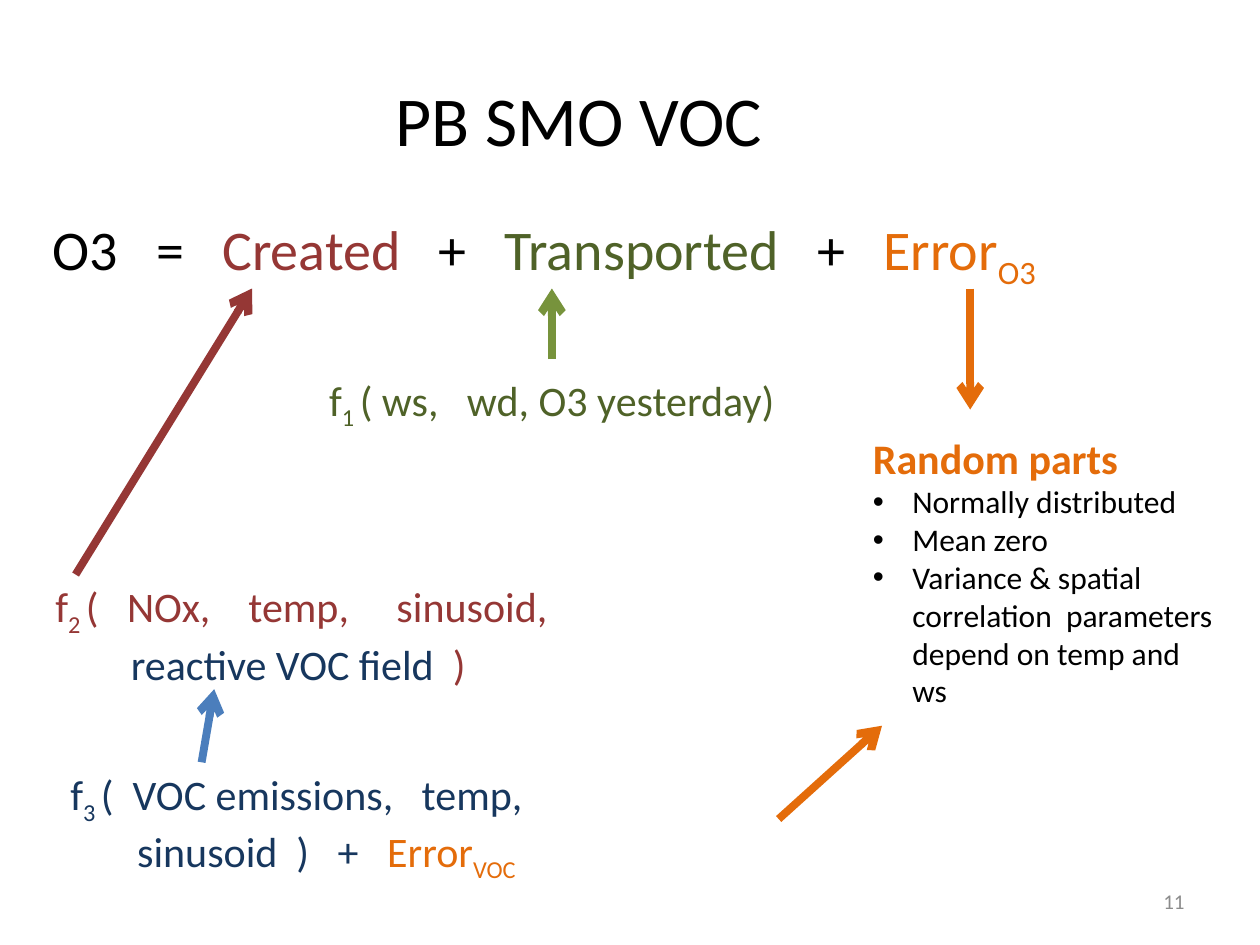
from lxml import etree
from pptx import Presentation
from pptx.dml.color import RGBColor
from pptx.enum.shapes import MSO_CONNECTOR
from pptx.enum.text import MSO_ANCHOR, PP_ALIGN
from pptx.oxml.ns import qn
from pptx.util import Inches, Pt

STRAIGHT = MSO_CONNECTOR.STRAIGHT
RIGHT = PP_ALIGN.RIGHT
MIDDLE = MSO_ANCHOR.MIDDLE
BOTTOM_SIDE = 2

FONT = "Calibri"
BLACK = RGBColor(0x00, 0x00, 0x00)
RED = RGBColor(0x95, 0x37, 0x35)
DARK_GREEN = RGBColor(0x4F, 0x62, 0x28)
GREEN = RGBColor(0x77, 0x93, 0x3C)
NAVY = RGBColor(0x17, 0x37, 0x5E)
BLUE = RGBColor(0x4B, 0x7E, 0xBC)
ORANGE = RGBColor(0xE4, 0x6C, 0x0A)
GRAY = RGBColor(0x8C, 0x8C, 0x8C)

# The slide is a grid of 100 columns and 75 rows
COLUMNS, ROWS = 100, 75
WIDTH, HEIGHT = Inches(10), Inches(7.5)
BULLET_INDENT = 3.13


def across(columns):
    return round(WIDTH * columns / COLUMNS)


def down(rows):
    return round(HEIGHT * rows / ROWS)


def add_text_box(slide, left, top, width, height, wrap=False):
    box = slide.shapes.add_textbox(across(left), down(top), across(width), down(height))
    box.text_frame.word_wrap = wrap
    return box


def add_run(paragraph, text, size, color, bold=False, subscript=False):
    run = paragraph.add_run()
    run.text = text
    font = run.font
    font.name, font.size, font.bold = FONT, Pt(size), bold
    font.color.rgb = color
    if subscript:
        font._element.set("baseline", "-25000")


def add_formula(paragraph, size, *parts):
    """Each part is (text, color), or (text, color, True) for a subscript."""
    for text, color, *subscript in parts:
        add_run(paragraph, text, size, color, subscript=bool(subscript))


def indent(paragraph, left, first_line=0):
    properties = paragraph._p.get_or_add_pPr()
    properties.set("marL", str(across(left)))
    properties.set("indent", str(across(first_line)))
    return properties


def add_bullet(text_frame, text, size, color):
    paragraph = text_frame.add_paragraph()
    properties = indent(paragraph, BULLET_INDENT, -BULLET_INDENT)
    etree.SubElement(properties, qn("a:buFont"), typeface="Arial")
    etree.SubElement(properties, qn("a:buChar"), char="•")
    add_run(paragraph, text, size, color)


def add_arrow(slide, start, end, color):
    arrow = slide.shapes.add_connector(
        STRAIGHT, across(start[0]), down(start[1]), across(end[0]), down(end[1]))
    arrow.line.color.rgb = color
    arrow.line.width = Pt(4.5)
    etree.SubElement(arrow.line._get_or_add_ln(), qn("a:tailEnd"), type="arrow")
    etree.SubElement(arrow._element.spPr, qn("a:effectLst"))
    return arrow


def add_title(slide):
    box = add_text_box(slide, 30.4, 5.6, 31.4, 7.7)
    add_run(box.text_frame.paragraphs[0], "PB SMO VOC", 40, BLACK)


def add_equation(slide):
    box = add_text_box(slide, 3.2, 16.5, 81.2, 6.4)
    add_formula(box.text_frame.paragraphs[0], 32,
                ("O3   =   ", BLACK), ("Created", RED), ("   +   ", BLACK),
                ("Transported", DARK_GREEN), ("   +   ", BLACK),
                ("Error", ORANGE), ("O3", ORANGE, True))
    return box


def add_functions(slide):
    # f1: transported ozone
    transported = add_text_box(slide, 23.7, 29.2, 39.5, 5).text_frame.paragraphs[0]
    transported.alignment = RIGHT
    add_formula(transported, 24, ("f", DARK_GREEN), ("1 ", DARK_GREEN, True),
                ("( ws,   wd, O3 yesterday) ", DARK_GREEN))

    # f2: created ozone
    frame = add_text_box(slide, 3.4, 45.6, 43.1, 9.1).text_frame
    add_formula(frame.paragraphs[0], 24, ("f", RED), ("2 ", RED, True),
                ("(   NOx,    temp,     sinusoid,", RED))
    second_line = frame.add_paragraph()
    indent(second_line, 6)
    add_formula(second_line, 24, ("reactive VOC field  ", NAVY), (")", RED))

    # f3: reactive VOC field
    frame = add_text_box(slide, 4.6, 60.5, 41.5, 9.1).text_frame
    add_formula(frame.paragraphs[0], 24, ("f", NAVY), ("3 ", NAVY, True),
                ("(  VOC emissions,   temp,", NAVY))
    second_line = frame.add_paragraph()
    indent(second_line, 5.3)
    add_formula(second_line, 24, ("sinusoid  )   +   ", NAVY),
                ("Error", ORANGE), ("VOC", ORANGE, True))


def add_random_parts(slide):
    frame = add_text_box(slide, 68.3, 33.8, 29.4, 23.2, wrap=True).text_frame
    add_run(frame.paragraphs[0], "Random parts", 24, ORANGE, bold=True)
    for text in ("Normally distributed", "Mean zero",
                 "Variance & spatial correlation  parameters depend on temp and ws"):
        add_bullet(frame, text, 18, BLACK)


def add_arrows(slide, equation):
    add_arrow(slide, (16, 60.5), (17, 54.7), BLUE)
    add_arrow(slide, (6, 45.6), (20, 22.9), RED)
    transported = add_arrow(slide, (43.8, 28.5), (43.8, 22.9), GREEN)
    transported.end_connect(equation, BOTTOM_SIDE)
    add_arrow(slide, (77, 22.9), (77, 32.5), ORANGE)
    add_arrow(slide, (61.8, 65), (70, 57.6), ORANGE)


def add_page_number(slide):
    frame = add_text_box(slide, 71.7, 69.5, 23.3, 4, wrap=True).text_frame
    frame.vertical_anchor = MIDDLE
    frame.paragraphs[0].alignment = RIGHT
    add_run(frame.paragraphs[0], "11", 12, GRAY)


def main():
    presentation = Presentation()
    presentation.slide_width, presentation.slide_height = WIDTH, HEIGHT
    slide = presentation.slides.add_slide(presentation.slide_layouts[6])

    equation = add_equation(slide)
    add_functions(slide)
    add_random_parts(slide)
    add_title(slide)
    add_arrows(slide, equation)
    add_page_number(slide)

    presentation.save("out.pptx")


if __name__ == "__main__":
    main()
